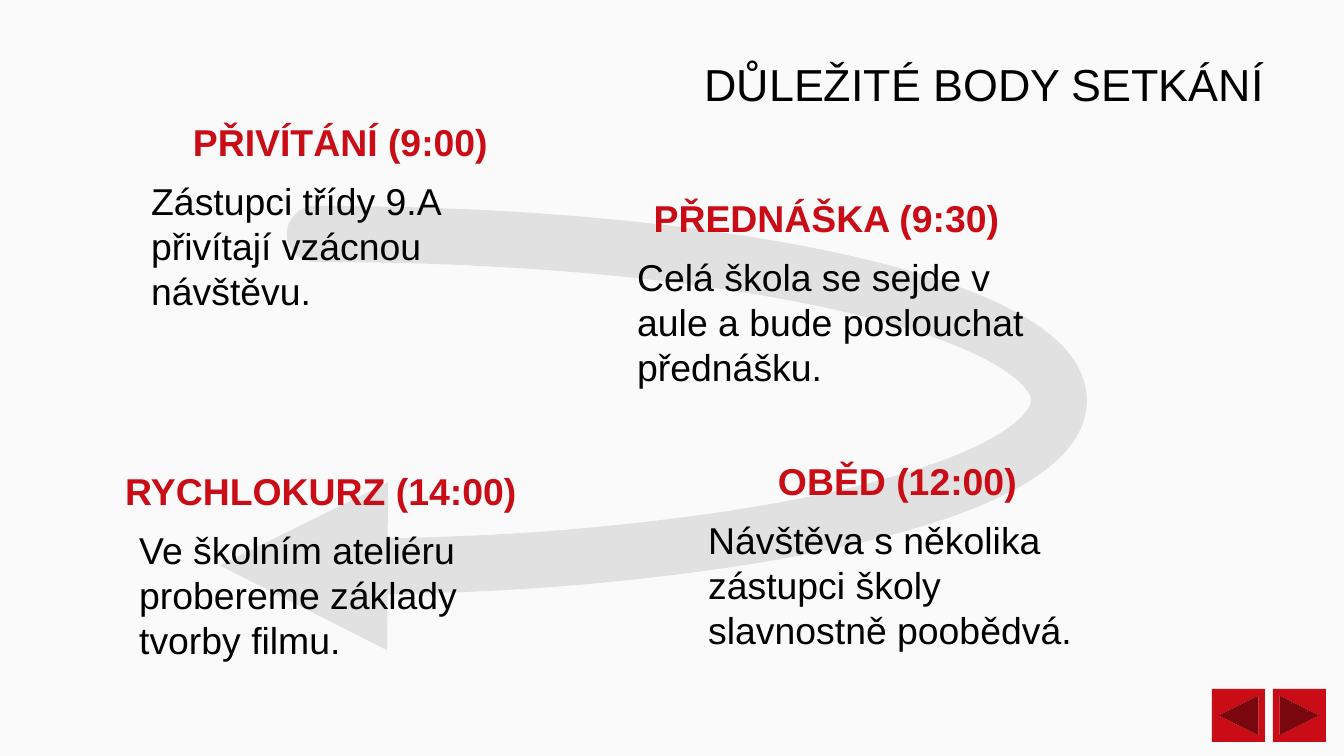
"""Build the slide with the main points of the meeting along a curved arrow."""
from lxml.etree import SubElement
from pptx import Presentation
from pptx.dml.color import RGBColor
from pptx.enum.shapes import MSO_SHAPE
from pptx.enum.text import MSO_ANCHOR, MSO_AUTO_SIZE, PP_ALIGN
from pptx.oxml.ns import qn
from pptx.util import Pt

PX = 914400 / 134.4
BACKGROUND = RGBColor(0xFA, 0xFA, 0xFA)
GREY = RGBColor(0xE1, 0xE1, 0xE1)
RED = RGBColor(0xCA, 0x0C, 0x16)
BLACK = RGBColor(0, 0, 0)


def px(*lengths):
    return [round(length * PX) for length in lengths]


def write(shape, text, size, color, bold=False, alignment=PP_ALIGN.LEFT):
    frame = shape.text_frame
    frame.text = text
    frame.word_wrap = True
    frame.auto_size = MSO_AUTO_SIZE.SHAPE_TO_FIT_TEXT
    frame.vertical_anchor = MSO_ANCHOR.TOP
    paragraph = frame.paragraphs[0]
    paragraph.alignment = alignment
    font = paragraph.runs[0].font
    font.name = "Arial"
    font.size = Pt(size)
    font.bold = bold
    font.color.rgb = color


presentation = Presentation()
presentation.slide_width, presentation.slide_height = px(1344, 756)
slide = presentation.slides.add_slide(presentation.slide_layouts[5])
slide.background.fill.solid()
slide.background.fill.fore_color.rgb = BACKGROUND

title = slide.shapes.title
title.left, title.top, title.width, title.height = px(691, 50, 609, 67)
write(title, "DŮLEŽITÉ BODY SETKÁNÍ", 24, BLACK, alignment=PP_ALIGN.JUSTIFY)

arc = slide.shapes.add_shape(MSO_SHAPE.ARC, *px(-418, 234, 1477, 333))
arc.shadow.inherit = False
arc.adjustments[0] = 160.84
arc.adjustments[1] = 72.86
arc.fill.background()
arc.line.color.rgb = GREY
arc.line.width = Pt(30)
outline = arc.element.spPr.find(qn("a:ln"))
outline.set("cap", "rnd")
SubElement(outline, qn("a:round"))
SubElement(outline, qn("a:tailEnd"), type="triangle")

CENTER, LEFT = PP_ALIGN.CENTER, PP_ALIGN.LEFT
points = [
    ("PŘIVÍTÁNÍ (9:00)", 134, 113, 413, CENTER, 138,
     "Zástupci třídy 9.A přivítají vzácnou návštěvu."),
    ("PŘEDNÁŠKA (9:30)", 620, 189, 413, CENTER, 624,
     "Celá škola se sejde v aule a bude poslouchat přednášku."),
    ("OBĚD (12:00)", 691, 452, 413, CENTER, 695,
     "Návštěva s několika zástupci školy slavnostně poobědvá."),
    ("RYCHLOKURZ (14:00)", 112, 462, 569, LEFT, 126,
     "Ve školním ateliéru probereme základy tvorby filmu."),
]
for heading, left, top, width, alignment, body_left, body in points:
    heading_box = slide.shapes.add_textbox(*px(left, top, width, 59))
    write(heading_box, heading, 20, RED, True, alignment)
    body_box = slide.shapes.add_textbox(*px(body_left, top + 59, 425, 149))
    write(body_box, body, 20, BLACK)

buttons = [
    (MSO_SHAPE.ACTION_BUTTON_BACK_OR_PREVIOUS, 1212),
    (MSO_SHAPE.ACTION_BUTTON_FORWARD_OR_NEXT, 1273),
]
for preset, left in buttons:
    button = slide.shapes.add_shape(preset, *px(left, 689, 53, 53))
    button.shadow.inherit = False
    button.fill.solid()
    button.fill.fore_color.rgb = RED
    button.line.fill.background()

presentation.save("out.pptx")
